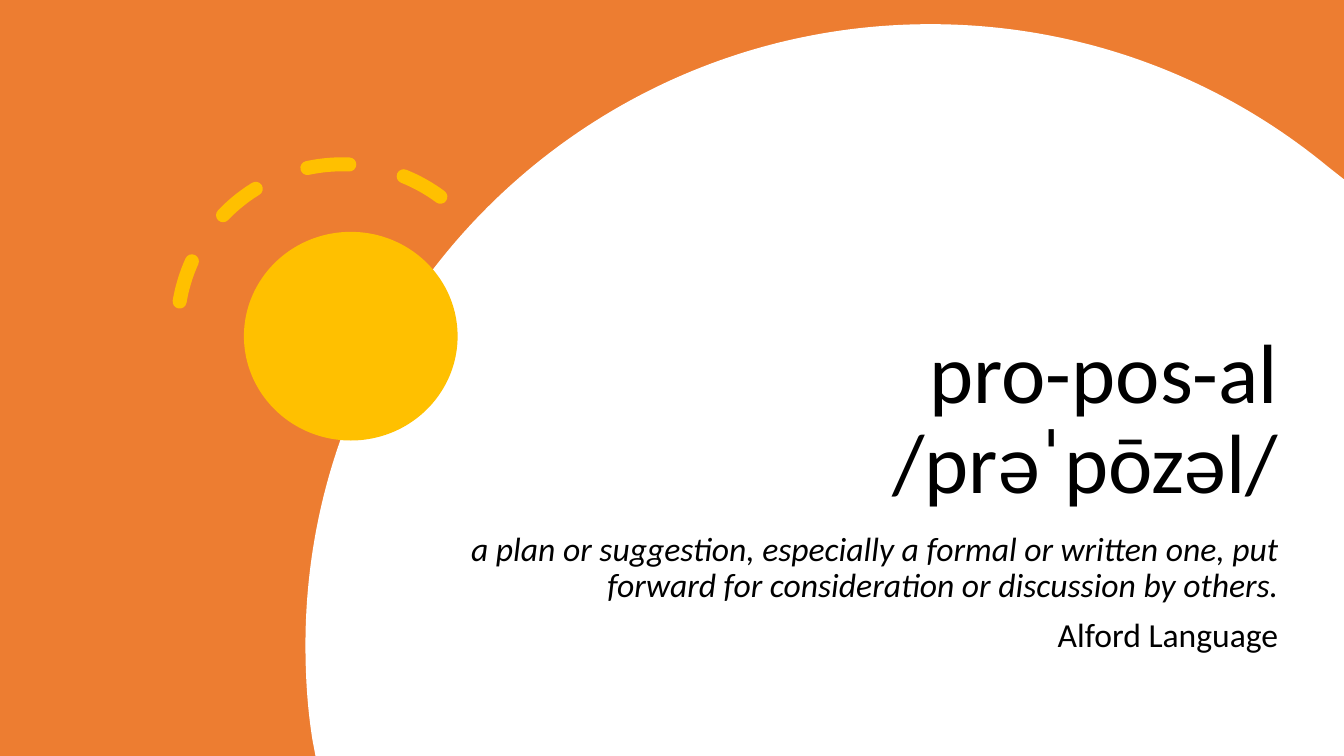
from dataclasses import dataclass

from lxml.etree import SubElement
from pptx import Presentation
from pptx.dml.color import RGBColor
from pptx.enum.dml import MSO_LINE
from pptx.enum.shapes import MSO_SHAPE
from pptx.enum.text import MSO_ANCHOR, PP_ALIGN
from pptx.oxml.ns import qn
from pptx.shapes.autoshape import Shape
from pptx.slide import Slide
from pptx.util import Inches, Pt

# The slide is a grid of 100 columns by 100 rows
WIDE, HIGH = Inches(13.33), Inches(7.5)

Spot = tuple[float, float]


@dataclass(frozen=True)
class Theme:
    back: RGBColor = RGBColor(0xED, 0x7D, 0x31)
    disc: RGBColor = RGBColor(0xFF, 0xFF, 0xFF)
    sun: RGBColor = RGBColor(0xFF, 0xC0, 0x00)
    ink: RGBColor = RGBColor(0, 0, 0)
    face: str = "Calibri"
    head: int = 60
    body: int = 24
    ray: int = 10


@dataclass(frozen=True)
class Box:
    left: float
    top: float
    width: float
    height: float

    def place(self) -> tuple[int, int, int, int]:
        return col(self.left), row(self.top), col(self.width), row(self.height)


@dataclass(frozen=True)
class Line:
    text: str
    size: int
    slant: bool = False
    before: int = 0


@dataclass(frozen=True)
class Block:
    box: Box
    anchor: MSO_ANCHOR
    lines: tuple[Line, ...]


THEME = Theme()


def col(count: float) -> int:
    return round(WIDE * count / 100)


def row(count: float) -> int:
    return round(HIGH * count / 100)


def paint(shape: Shape, color: RGBColor) -> None:
    shape.shadow.inherit = False
    shape.fill.solid()
    shape.fill.fore_color.rgb = color
    shape.line.fill.background()


def add_plain(slide: Slide, kind: MSO_SHAPE, box: Box, color: RGBColor) -> None:
    paint(slide.shapes.add_shape(kind, *box.place()), color)


def add_disc(slide: Slide, start: Spot, parts: tuple[tuple[Spot, ...], ...]) -> None:
    """Draw an outline: parts of one spot are straight, of three are curves."""
    pen = slide.shapes.build_freeform(col(start[0]), row(start[1]))
    pen.add_line_segments([(col(x), row(y)) for part in parts for x, y in part])
    shape = pen.convert_to_shape()
    steps = iter(list(shape.element.iter(qn("a:lnTo"))))
    for part in parts:
        group = [next(steps) for _ in part]
        if len(group) == 3:
            outline = group[0].getparent()
            curve = SubElement(outline, qn("a:cubicBezTo"))
            group[0].addprevious(curve)
            for step in group:
                curve.append(step[0])
                outline.remove(step)
    paint(shape, THEME.disc)


def add_rays(slide: Slide, box: Box) -> None:
    arc = slide.shapes.add_shape(MSO_SHAPE.ARC, *box.place())
    arc.shadow.inherit = False
    arc.rotation = 308.7
    for i, turn in enumerate((144.56, 2.28)):
        arc.adjustments[i] = turn
    arc.fill.background()
    arc.line.color.rgb = THEME.sun
    arc.line.width = Pt(THEME.ray)
    arc.line.dash_style = MSO_LINE.DASH
    arc.element.spPr.find(qn("a:ln")).set("cap", "rnd")


def add_text(slide: Slide, block: Block) -> None:
    frame = slide.shapes.add_textbox(*block.box.place()).text_frame
    frame.word_wrap = True
    frame.vertical_anchor = block.anchor
    for i, line in enumerate(block.lines):
        para = frame.add_paragraph() if i else frame.paragraphs[0]
        para.text = line.text
        form = {"alignment": PP_ALIGN.RIGHT, "line_spacing": 0.9,
                "space_before": Pt(line.before)}
        for name, value in form.items():
            setattr(para, name, value)
        for run in para.runs:
            font = {"name": THEME.face, "size": Pt(line.size), "italic": line.slant}
            for name, value in font.items():
                setattr(run.font, name, value)
            run.font.color.rgb = THEME.ink


# Large oval, cut off by the right and bottom edges
CREST = (69.23, 3.2)
RIM = (
    ((80.48, 3.2), (90.75, 10.27), (98.77, 22)),
    ((100, 23.73),),
    ((100, 100),),
    ((23.48, 100),),
    ((23.25, 97.87),),
    ((22.88, 93.73), (22.73, 89.6), (22.73, 85.33)),
    ((22.73, 40), (43.58, 3.2), CREST),
)

BLOCKS = (
    Block(Box(33.15, 28.27, 62.7, 40.13), MSO_ANCHOR.BOTTOM,
          (Line("pro-pos-al\v/prəˈpōzəl/", THEME.head),)),
    Block(Box(33.15, 69.73, 62.7, 19.33), MSO_ANCHOR.TOP, (
        Line("a plan or suggestion, especially a formal or written one, put "
             "forward for consideration or discussion by others.",
             THEME.body, True, 10),
        Line("Alford Language", THEME.body, False, 10),
    )),
)


def main() -> None:
    deck = Presentation()
    deck.slide_width, deck.slide_height = WIDE, HIGH
    slide = deck.slides.add_slide(deck.slide_layouts[6])

    # Backdrop
    add_plain(slide, MSO_SHAPE.RECTANGLE, Box(0, 0, 100, 100), THEME.back)
    add_disc(slide, CREST, RIM)

    # Sun with its rays
    add_plain(slide, MSO_SHAPE.OVAL, Box(18.15, 30.67, 15.9, 27.6), THEME.sun)
    add_rays(slide, Box(13.2, 21.73, 24.53, 43.6))

    # Title and meaning
    for block in BLOCKS:
        add_text(slide, block)

    deck.save("out.pptx")


if __name__ == "__main__":
    main()
